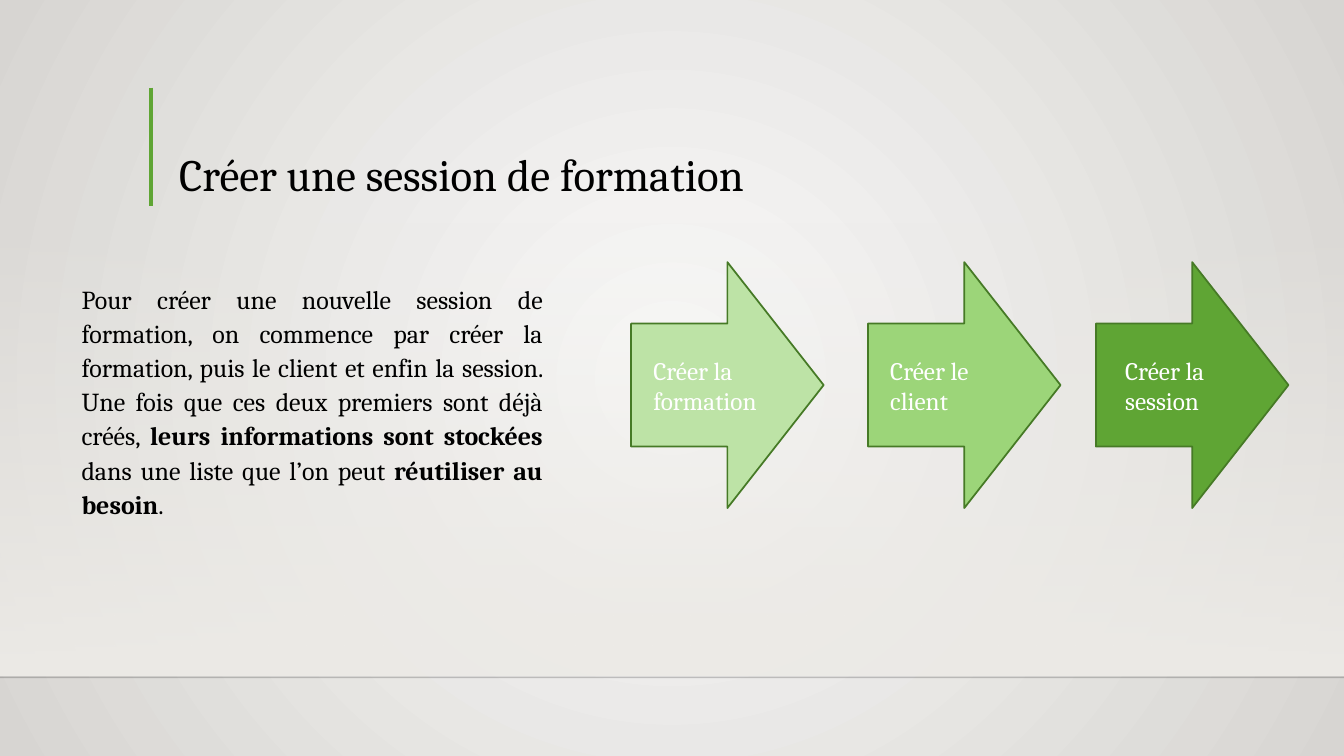
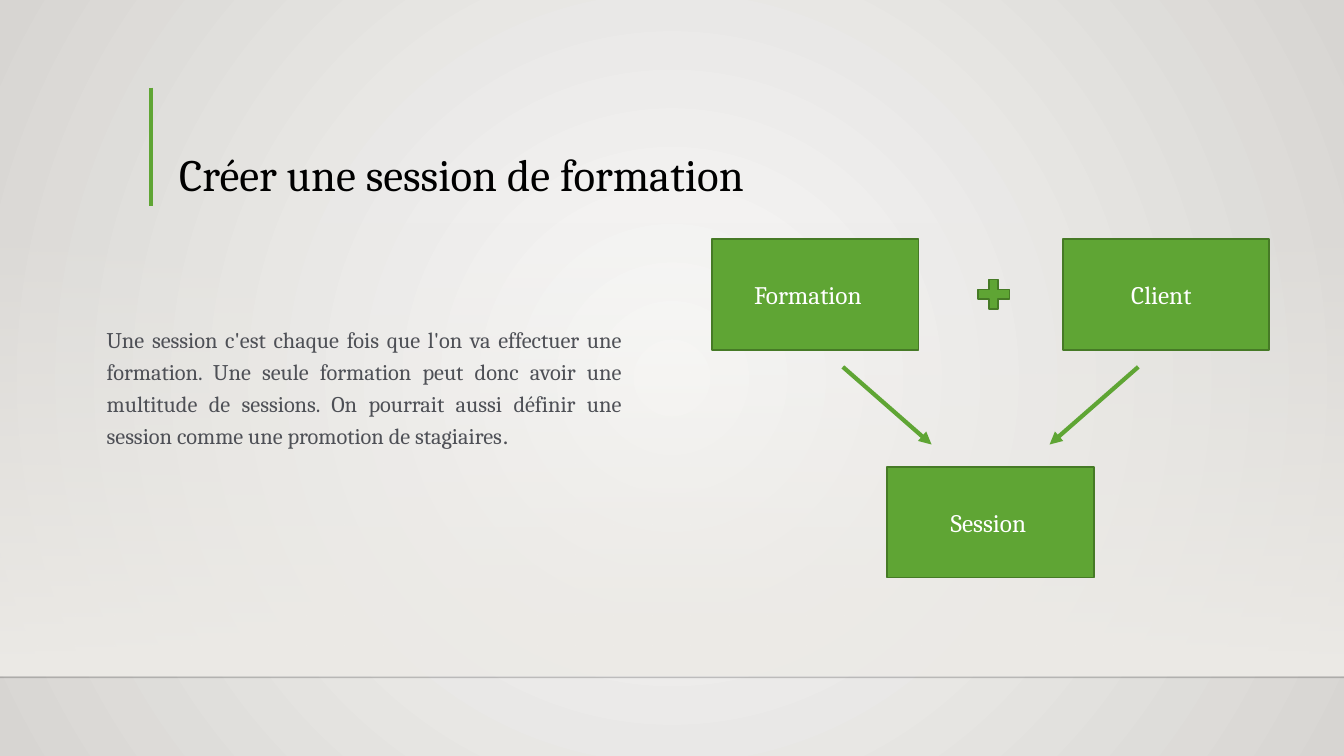
from dataclasses import dataclass

from lxml.etree import SubElement
from pptx import Presentation
from pptx.dml.color import RGBColor
from pptx.enum.shapes import MSO_CONNECTOR, MSO_SHAPE
from pptx.enum.text import MSO_ANCHOR, PP_ALIGN
from pptx.oxml.ns import qn
from pptx.util import Inches, Pt

COLORS = {
    "glow": "FAFAF9",
    "edge": "D7D5D2",
    "band": "EDEBE7",
    "rule": "000001",
    "black": "000000",
    "gray": "4E5056",
    "white": "FFFFFF",
    "green": "5FA534",
    "outline": "467A26",
    "pale_green": "BDE3A6",
    "light_green": "9CD579",
}
FONT = "Cambria"
TITLE = "Créer une session de formation"


@dataclass
class Box:
    left: int
    top: int
    width: int
    height: int

    def point(self, x, y):
        """Turn percentages of this box into a position on the slide."""
        return (round(self.left + self.width * x / 100),
                round(self.top + self.height * y / 100))

    def inner(self, x, y, width, height):
        """Cut out an inner box given in percentages of this one."""
        return Box(*self.point(x, y), round(self.width * width / 100),
                   round(self.height * height / 100))

    def bounds(self):
        return self.left, self.top, self.width, self.height


PAGE = Box(0, 0, Inches(13.33), Inches(7.5))


def rgb(name):
    return RGBColor.from_string(COLORS[name])


def set_alpha(element, percent):
    """Make the first colour inside the element partly transparent."""
    color = element.find(".//" + qn("a:srgbClr"))
    SubElement(color, qn("a:alpha"), val=str(percent * 1000))


def set_gradient(fill, start, end):
    fill.gradient()
    for stop, name in zip(fill.gradient_stops, (start, end)):
        stop.color.rgb = rgb(name)


def write(frame, spans, size=18, color="white", align=PP_ALIGN.LEFT,
          anchor=MSO_ANCHOR.TOP, spacing=1.0, after=0, inset=0.1):
    """Fill a text frame with one paragraph of (text, font options) spans."""
    frame.word_wrap = True
    frame.vertical_anchor = anchor
    frame.margin_left = Inches(inset)
    para = frame.paragraphs[0]
    para.alignment = align
    para.line_spacing = spacing
    para.space_after = Pt(after)
    for text, options in spans:
        span = para.add_run()
        span.text = text
        span.font.size = Pt(size)
        span.font.name = options.get("font", FONT)
        span.font.bold = options.get("bold", False)
        span.font.color.rgb = rgb(color)


def add_text(page, box, spans, **style):
    write(page.shapes.add_textbox(*box.bounds()).text_frame, spans, **style)


def add_figure(page, kind, box, fill="green", label="", inset=0.1):
    """Add an outlined shape with an optional label starting at the inset."""
    figure = page.shapes.add_shape(kind, *box.bounds())
    figure.shadow.inherit = False
    figure.fill.solid()
    figure.fill.fore_color.rgb = rgb(fill)
    figure.line.color.rgb = rgb("outline")
    figure.line.width = Pt(1.25)
    if label:
        figure.text_frame.margin_right = Inches(0.05)
        write(figure.text_frame, [(label, {})], anchor=MSO_ANCHOR.MIDDLE,
              inset=inset)


def add_line(page, start, end, color="green", width=3, alpha=100, arrow=False):
    line = page.shapes.add_connector(MSO_CONNECTOR.STRAIGHT, *start, *end)
    line.line.color.rgb = rgb(color)
    line.line.width = Pt(width)
    properties = line._element.spPr
    if alpha < 100:
        set_alpha(properties, alpha)
    if arrow:
        SubElement(properties.find(qn("a:ln")), qn("a:tailEnd"),
                   type="triangle")
    SubElement(properties, qn("a:effectLst"))


def add_backdrop(page, box):
    set_gradient(page.background.fill, "glow", "edge")
    gradient = page._element.find(".//" + qn("a:gradFill"))
    gradient.remove(gradient.find(qn("a:lin")))
    circle = SubElement(gradient, qn("a:path"), {"path": "circle"})
    SubElement(circle, qn("a:fillToRect"), dict.fromkeys("ltrb", "50000"))

    band = page.shapes.add_shape(MSO_SHAPE.RECTANGLE,
                                 *box.inner(0, 29.33, 100, 60).bounds())
    band.shadow.inherit = False
    band.line.fill.background()
    set_gradient(band.fill, "band", "band")
    band.fill.gradient_angle = 270
    set_alpha(band._element, 0)
    add_line(page, box.point(0, 89.6), box.point(100, 89.6),
             color="rule", width=1, alpha=20)


def add_title(page, box, text):
    add_line(page, box.point(11.25, 11.6), box.point(11.25, 27.2))
    add_text(page, box.inner(12.6, 11.73, 78.09, 15.47), [(text, {})], size=32,
             color="black", anchor=MSO_ANCHOR.BOTTOM, spacing=0.9)


def add_steps(page, box):
    steps = [
        ("Créer la formation", "pale_green", 0, 0.22),
        ("Créer le client", "light_green", 36.04, 0.22),
        ("Créer la session", "green", 70.71, 0.29),
    ]
    for label, fill, left, inset in steps:
        add_figure(page, MSO_SHAPE.RIGHT_ARROW, box.inner(left, 0, 29.29, 100),
                   fill, label, inset)


def add_session_diagram(page, box):
    """Draw two sources joined by a plus, both pointing at their result."""
    width, height = 37.07, 32.74
    cards = [
        ("Formation", 0, 0, 0.42),
        ("Client", 100 - width, 0, 0.68),
        ("Session", (100 - width) / 2, 100 - height, 0.63),
    ]
    for label, left, top, inset in cards:
        add_figure(page, MSO_SHAPE.RECTANGLE,
                   box.inner(left, top, width, height),
                   label=label, inset=inset)
    add_figure(page, MSO_SHAPE.MATH_PLUS, box.inner(46.65, 10.42, 7.78, 11.9))
    for start, end in ((23.51, 39.42), (76.49, 60.58)):
        add_line(page, box.point(start, 37.8), box.point(end, 60.71),
                 arrow=True)


def add_page(deck):
    page = deck.slides.add_slide(deck.slide_layouts[6])
    add_backdrop(page, PAGE)
    add_title(page, PAGE, TITLE)
    return page


def build_steps_page(deck):
    page = add_page(deck)
    spans = [
        ("Pour créer une nouvelle session de formation, on commence par créer "
         "la formation, puis le client et enfin la session. Une fois que ces "
         "deux premiers sont déjà créés, ", {}),
        ("leurs informations sont stockées", {"bold": True}),
        (" dans une liste que l’on peut ", {}),
        ("réutiliser au besoin", {"bold": True}),
        (".", {}),
    ]
    add_text(page, PAGE.inner(5.33, 36.4, 35.78, 34.4), spans, size=18.5,
             color="black", align=PP_ALIGN.JUSTIFY, spacing=1.1, after=3)
    add_steps(page, PAGE.inner(46.96, 34.67, 48.91, 32.53))


def build_definition_page(deck):
    page = add_page(deck)
    spans = [
        ("Une session c'est chaque fois que l'on va effectuer une formation. "
         "Une seule formation peut donc avoir une multitude de sessions. On "
         "pourrait aussi définir une session comme une promotion de "
         "stagiaires", {}),
        (".", {"font": "League Spartan"}),
    ]
    add_text(page, PAGE.inner(7.2, 41.73, 39.83, 24.67), spans, size=16,
             color="gray", align=PP_ALIGN.JUSTIFY, spacing=1.2, after=3)
    add_session_diagram(page, PAGE.inner(52.96, 31.6, 41.49, 44.8))


def main():
    deck = Presentation()
    deck.slide_width, deck.slide_height = PAGE.width, PAGE.height
    build_steps_page(deck)
    build_definition_page(deck)
    deck.save("out.pptx")


if __name__ == "__main__":
    main()
